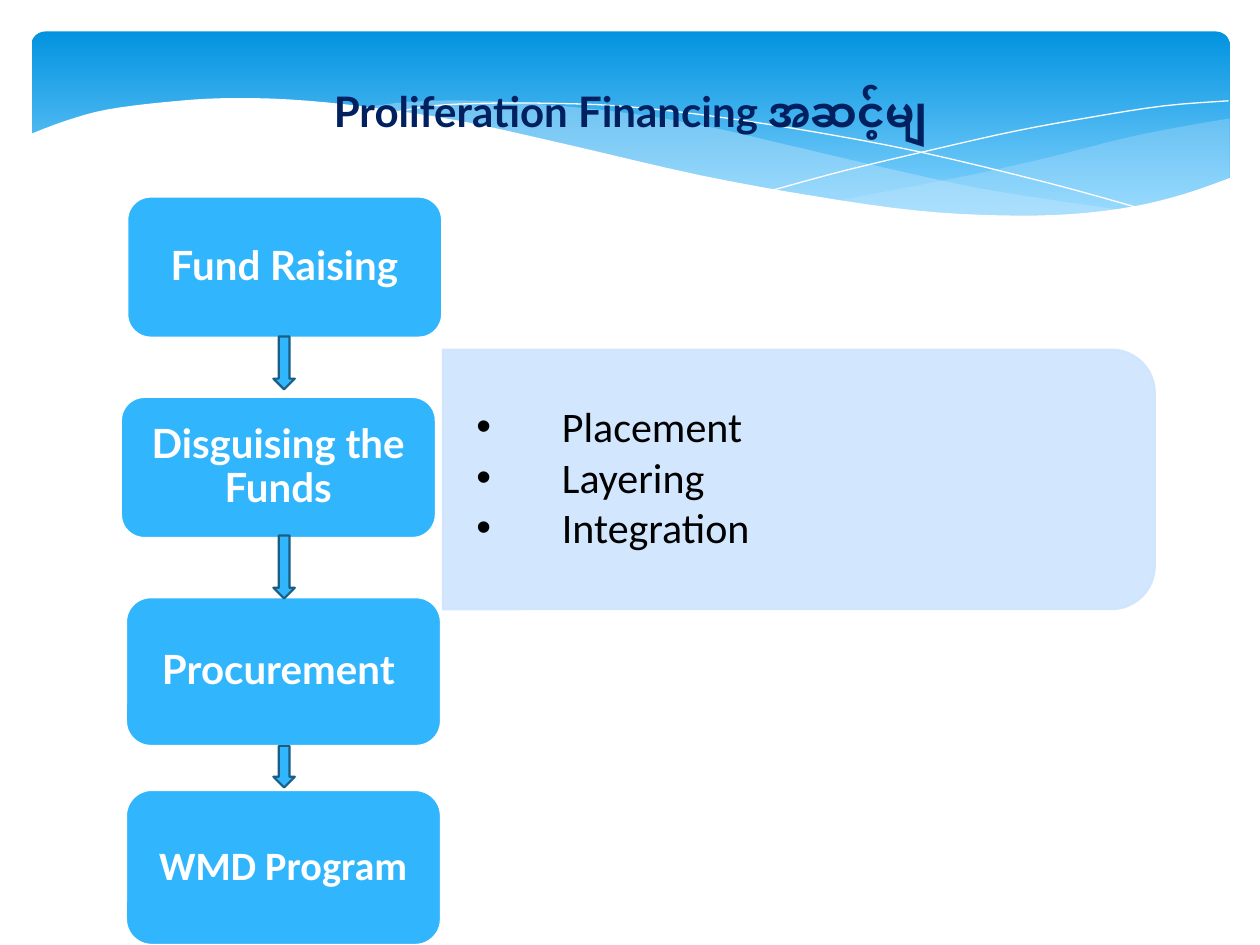
from lxml.etree import SubElement
from pptx import Presentation
from pptx.dml.color import RGBColor
from pptx.enum.shapes import MSO_SHAPE
from pptx.enum.text import MSO_ANCHOR, PP_ALIGN
from pptx.oxml.ns import qn
from pptx.util import Inches, Pt

WIDTH, HEIGHT = Inches(10), Inches(7.5)
COLUMNS = 10
CELL = WIDTH // COLUMNS

WHITE = RGBColor(0xFF, 0xFF, 0xFF)
BLACK = RGBColor(0x00, 0x00, 0x00)
NAVY = RGBColor(0x00, 0x20, 0x60)
SKY = RGBColor(0x31, 0xB6, 0xFD)
DEEP_SKY = RGBColor(0x02, 0x93, 0xE0)
LIGHT_SKY = RGBColor(0x83, 0xD3, 0xFE)
MIST = RGBColor(0xC6, 0xE7, 0xFC)
PALE = RGBColor(0xCE, 0xE5, 0xFE)
STEEL = RGBColor(0x19, 0x5F, 0x84)

RIGHT_WAVE = (
    [(9.76, 0.94), (9.35, 1.01), (8.91, 1.1), (8.32, 1.25), (7.79, 1.37), (7.29, 1.47), (6.61, 1.6)],
    [(6.61, 1.6), (7.05, 1.65), (7.45, 1.69), (7.81, 1.72), (8.24, 1.72), (8.63, 1.7), (9.05, 1.63),
     (9.42, 1.54), (9.76, 1.41)],
)
MIDDLE_WAVE = (
    [(8.93, 1.67), (8.37, 1.59), (7.75, 1.49), (7.06, 1.34), (6.29, 1.16), (5.69, 1.02), (5.14, 0.92),
     (4.65, 0.86), (4.2, 0.82), (3.8, 0.8), (3.44, 0.8), (3.13, 0.82), (2.86, 0.86)],
    [(2.86, 0.86), (3.42, 0.94), (4.04, 1.06), (4.91, 1.26), (5.66, 1.43), (6.34, 1.56), (6.95, 1.65),
     (7.48, 1.7), (7.96, 1.73), (8.38, 1.72), (8.93, 1.67)],
)
FALLING_LINE = (
    [(3.09, 0.9), (3.44, 0.84), (3.87, 0.82), (4.33, 0.82), (4.89, 0.84), (5.56, 0.91), (6.36, 1.03),
     (7.27, 1.2), (8.31, 1.45), (9.07, 1.66)],
)
RISING_LINE = (
    [(6.13, 1.51), (6.72, 1.35), (7.48, 1.17), (8.06, 1.04), (8.66, 0.93), (9.24, 0.84), (9.75, 0.8)],
)
LOWER_WAVE = (
    [(9.77, 1.41), (9.4, 1.54), (8.99, 1.64), (8.5, 1.7), (7.93, 1.71), (7.26, 1.67), (6.48, 1.56),
     (5.55, 1.39), (4.47, 1.14), (3.65, 0.96), (2.92, 0.85), (2.3, 0.79), (1.77, 0.78), (1.32, 0.81),
     (0.85, 0.87), (0.52, 0.96), (0.23, 1.07)],
    [(0.23, 2.24), (9.77, 2.24)],
)
STAGES = [
    ("Fund Raising", "Lato", (1.01, 1.56, 2.5, 1.12)),
    ("Disguising the Funds", "Lato", (0.96, 3.15, 2.5, 1.12)),
    ("Procurement ", "Lato", (1, 4.74, 2.5, 1.18)),
    ("WMD Program", "Calibri", (1, 6.27, 2.5, 1.23)),
]
ARROWS = [(2.67, 0.42), (4.25, 0.5), (5.92, 0.33)]
TECHNIQUES = ["Placement", "Layering", "Integration"]


def cells(*values):
    """Turn grid cells into slide lengths."""
    return [round(v * CELL) for v in values]


def smooth(knots, steps=4):
    """Return points of a Catmull-Rom curve through the knots."""
    if len(knots) == 2:
        return knots
    padded = [knots[0], *knots, knots[-1]]
    points = [knots[0]]
    for a, b, c, d in zip(padded, padded[1:], padded[2:], padded[3:]):
        for t in (n / steps for n in range(1, steps + 1)):
            points.append(tuple(
                (2 * q + (r - p) * t + (2 * p - 5 * q + 4 * r - u) * t ** 2
                 + (3 * q - p - 3 * r + u) * t ** 3) / 2
                for p, q, r, u in zip(a, b, c, d)))
    return points


def paint(s, fill=None, line=None, width=1.25):
    """Set the fill and line of a shape and drop its shadow."""
    s.shadow.inherit = False
    if fill is None:
        s.fill.background()
    else:
        s.fill.solid()
        s.fill.fore_color.rgb = fill
    if line is None:
        s.line.fill.background()
    else:
        s.line.color.rgb = line
        s.line.width = Pt(width)


def set_opacity(fill, percent):
    """Make a solid fill partly transparent."""
    color = fill._xPr.find(qn("a:solidFill"))[0]
    SubElement(color, qn("a:alpha"), val=str(percent * 1000))


def add_preset(slide, kind, box, fill, line=None):
    """Add a painted preset shape."""
    s = slide.shapes.add_shape(kind, *cells(*box))
    paint(s, fill, line)
    return s


def add_wave(slide, curves, fill=None, opacity=100, line=None):
    """Add a closed wave, or an open line when no fill is given."""
    points = [cells(*point) for curve in curves for point in smooth(curve)]
    builder = slide.shapes.build_freeform(*points[0], scale=1.0)
    builder.add_line_segments(points[1:], close=fill is not None)
    s = builder.convert_to_shape()
    paint(s, fill, line, 0)
    if opacity < 100:
        set_opacity(s.fill, opacity)


def set_frame(tf, anchor, horizontal, vertical):
    """Set wrapping, anchor and insets of a text frame."""
    tf.word_wrap = True
    tf.vertical_anchor = anchor
    tf.margin_left = tf.margin_right = cells(horizontal)[0]
    tf.margin_top = tf.margin_bottom = cells(vertical)[0]


def add_run(p, text, font, size, color, bold=False):
    """Add a formatted run to a paragraph."""
    r = p.add_run()
    r.text = text
    r.font.name, r.font.size, r.font.bold = font, Pt(size), bold
    r.font.color.rgb = color


def add_header(slide):
    """Add the gradient band with its waves."""
    s = add_preset(slide, MSO_SHAPE.ROUNDED_RECTANGLE, (0.25, 0.25, 9.51, 1.56), DEEP_SKY)
    s.adjustments[0] = 0.07
    s.fill.gradient()
    s.fill.gradient_angle = 270
    for stop, color, position in zip(s.fill.gradient_stops, (DEEP_SKY, LIGHT_SKY), (0, 0.9)):
        stop.color.rgb = color
        stop.position = position
    add_wave(slide, RIGHT_WAVE, MIST, 29)
    add_wave(slide, MIDDLE_WAVE, MIST, 40)
    add_wave(slide, FALLING_LINE, line=WHITE)
    add_wave(slide, RISING_LINE, line=WHITE)
    add_wave(slide, LOWER_WAVE, WHITE)


def add_title(slide, text):
    """Add the centred title."""
    tf = slide.shapes.add_textbox(*cells(0.42, 0.43, 9.17, 0.66)).text_frame
    set_frame(tf, MSO_ANCHOR.TOP, 0.1, 0.05)
    p = tf.paragraphs[0]
    p.alignment, p.line_spacing = PP_ALIGN.CENTER, 1.5
    p.space_before = Pt(12)
    add_run(p, text, "Lato", 24, NAVY, True)


def add_stage(slide, text, font, box):
    """Add one rounded stage card."""
    s = add_preset(slide, MSO_SHAPE.ROUNDED_RECTANGLE, box, SKY, WHITE)
    set_frame(s.text_frame, MSO_ANCHOR.MIDDLE, 0.15, 0.1)
    p = s.text_frame.paragraphs[0]
    p.alignment, p.line_spacing = PP_ALIGN.CENTER, 0.9
    add_run(p, text, font, 23, WHITE, True)


def add_techniques(slide, items):
    """Add the pale panel with its bulleted list."""
    s = add_preset(slide, MSO_SHAPE.ROUND_2_SAME_RECTANGLE, (5.31, 0.98, 2.06, 5.65), PALE, PALE)
    s.rotation = 90
    set_opacity(s.fill, 90)
    set_opacity(s.line.fill, 90)
    tf = slide.shapes.add_textbox(*cells(3.51, 2.88, 5.55, 1.85)).text_frame
    set_frame(tf, MSO_ANCHOR.MIDDLE, 0.27, 0.14)
    indent = cells(0.68)[0]
    for i, item in enumerate(items):
        p = tf.add_paragraph() if i else tf.paragraphs[0]
        p.level, p.line_spacing, p.space_after = 1, 0.9, Pt(3)
        pPr = p._p.get_or_add_pPr()
        pPr.set("marL", str(indent))
        pPr.set("indent", str(-indent))
        SubElement(pPr, qn("a:buFont"), typeface="Arial")
        SubElement(pPr, qn("a:buChar"), char="•")
        add_run(p, item, "Calibri", 24, BLACK)


def main():
    """Build and save the slide."""
    prs = Presentation()
    prs.slide_width, prs.slide_height = WIDTH, HEIGHT
    slide = prs.slides.add_slide(prs.slide_layouts[6])
    add_header(slide)
    add_title(slide, "Proliferation Financing အဆင့်များ")
    add_techniques(slide, TECHNIQUES)
    for text, font, box in STAGES:
        add_stage(slide, text, font, box)
    for top, height in ARROWS:
        add_preset(slide, MSO_SHAPE.DOWN_ARROW, (2.17, top, 0.17, height), SKY, STEEL)
    prs.save("out.pptx")


if __name__ == "__main__":
    main()
